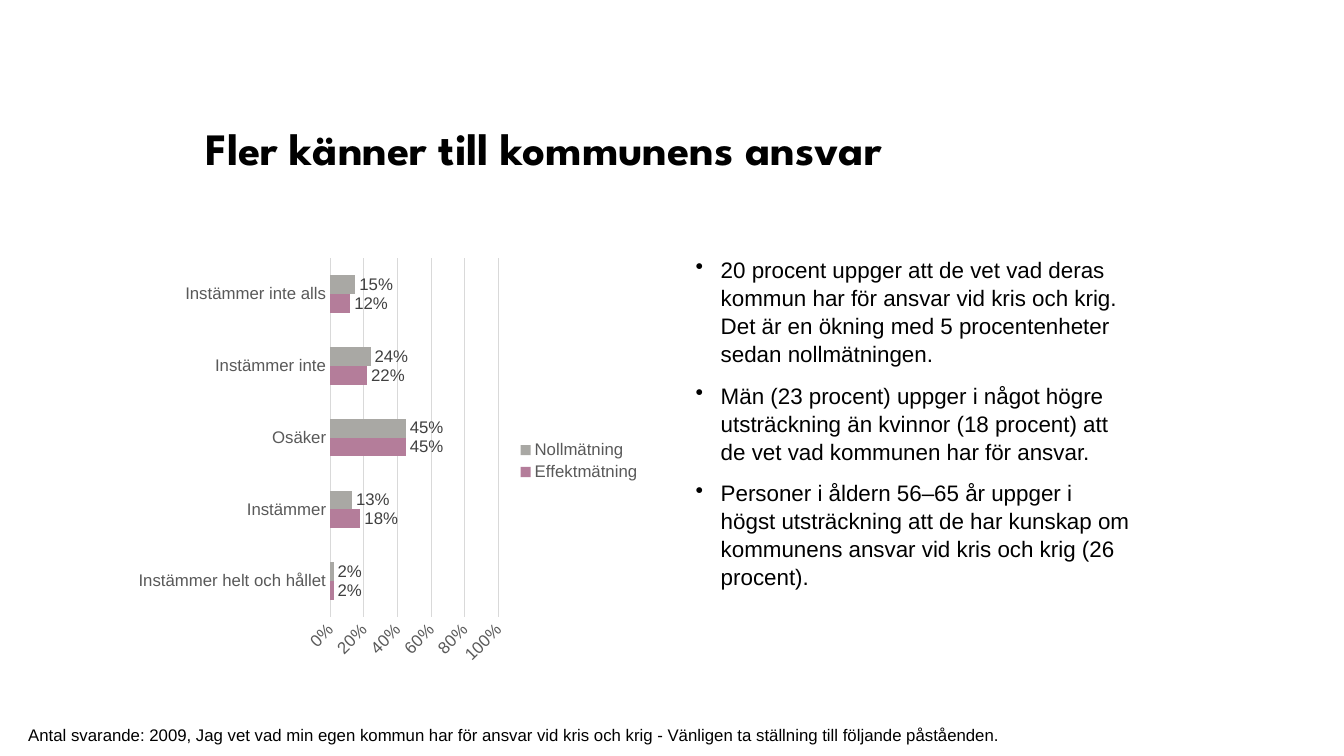
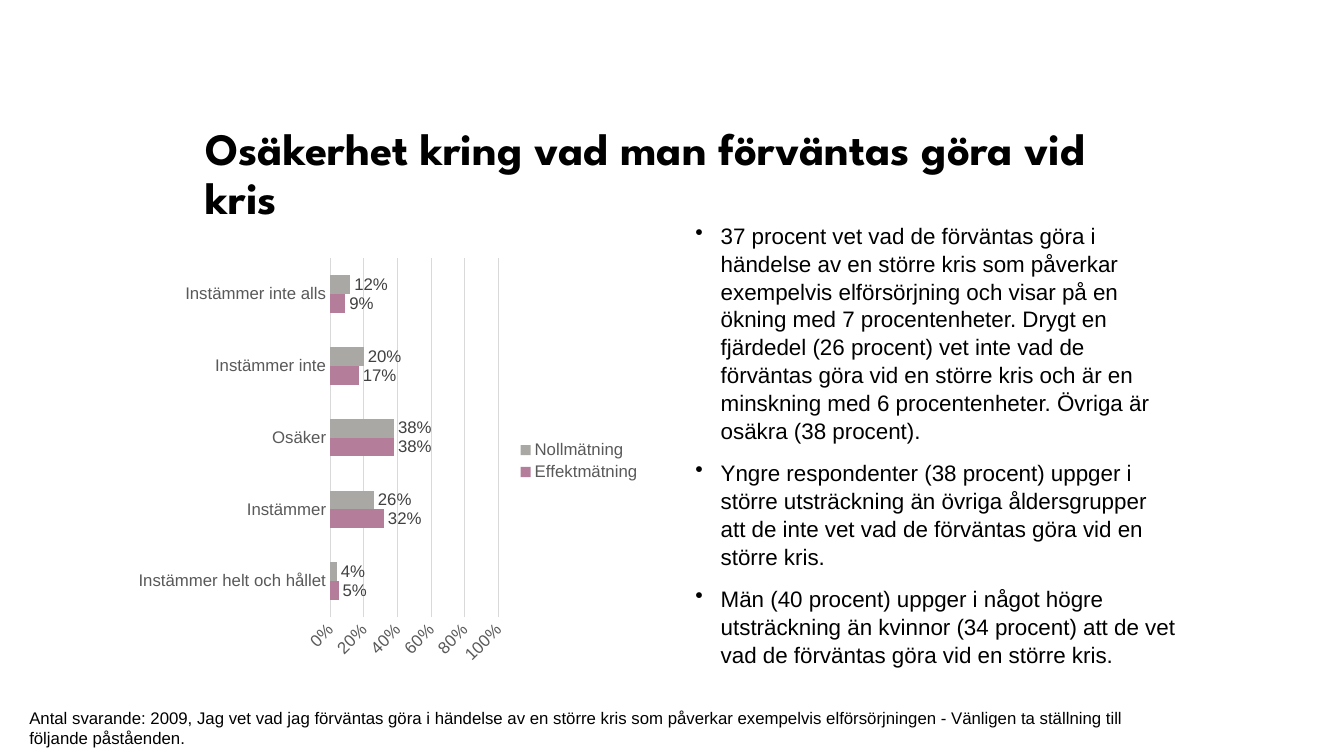
import pptx
import pptx.chart.data
import pptx.dml.color
import pptx.enum.chart
import pptx.enum.text
import pptx.oxml
import pptx.oxml.ns
import pptx.util

Inches = pptx.util.Inches
Pt = pptx.util.Pt

CATEGORIES = ["Instämmer helt och hållet", "Instämmer", "Osäker",
              "Instämmer inte", "Instämmer inte alls"]


def color(value):
    return pptx.dml.color.RGBColor.from_string(value)


class Deck:
    BODY_FONT = "Arial"
    TITLE_FONT = "League Spartan"
    TEXT = "000000"
    AXIS_TEXT = "595959"
    LABEL_TEXT = "404040"
    GRID = "D9D9D9"
    SERIES_COLORS = {"Effektmätning": "B47D9A", "Nollmätning": "A9A8A4"}

    def __init__(self):
        self.presentation = pptx.Presentation()
        self.presentation.slide_width = Inches(13.33)
        self.presentation.slide_height = Inches(7.5)
        self.slide = None

    def add_slide(self):
        self.slide = self.presentation.slides.add_slide(self.presentation.slide_layouts[6])

    def style_font(self, font, size, value, name=BODY_FONT, bold=False):
        font.size = Pt(size)
        font.name = name
        font.bold = bold
        font.color.rgb = color(value)

    def text_frame(self, left, top, width, height):
        box = self.slide.shapes.add_textbox(Inches(left), Inches(top), Inches(width), Inches(height))
        box.text_frame.word_wrap = True
        return box.text_frame

    def add_run(self, paragraph, text, size, name=BODY_FONT, bold=False):
        run = paragraph.add_run()
        run.text = text
        self.style_font(run.font, size, self.TEXT, name, bold)

    def title(self, text):
        paragraph = self.text_frame(1.94, 1.21, 9.38, 1.06).paragraphs[0]
        paragraph.line_spacing = 0.9
        self.add_run(paragraph, text, 32, self.TITLE_FONT, True)

    def bullets(self, texts, top, width, height):
        frame = self.text_frame(6.8, top, width, height)
        for index, text in enumerate(texts):
            paragraph = frame.add_paragraph() if index else frame.paragraphs[0]
            properties = paragraph._p.get_or_add_pPr()
            properties.set("marL", str(Inches(0.25)))
            properties.set("indent", str(Inches(-0.25)))
            bullet = pptx.oxml.parse_xml(
                f'<a:buChar {pptx.oxml.ns.nsdecls("a")} char="•"/>')
            properties.append(bullet)
            paragraph.line_spacing = 1.04
            if index:
                paragraph.space_before = Pt(10)
            self.add_run(paragraph, text, 16)

    def footer(self, text, left, top, width, height):
        frame = self.text_frame(left, top, width, height)
        frame.margin_left = frame.margin_right = 0
        frame.margin_top = frame.margin_bottom = 0
        self.add_run(frame.paragraphs[0], text, 12)

    def bar_chart(self, values):
        data = pptx.chart.data.CategoryChartData(number_format="0%")
        data.categories = CATEGORIES
        for name in self.SERIES_COLORS:
            data.add_series(name, values[name])
        chart = self.slide.shapes.add_chart(
            pptx.enum.chart.XL_CHART_TYPE.BAR_CLUSTERED,
            Inches(1.27), Inches(2.48), Inches(5.19), Inches(4.19), data).chart
        self.style_font(chart.font, 10, self.TEXT)
        chart.has_title = False
        chart.has_legend = True
        chart.legend.position = pptx.enum.chart.XL_LEGEND_POSITION.RIGHT
        chart.legend.include_in_layout = False
        self.style_font(chart.legend.font, 12, self.AXIS_TEXT)
        self.style_axes(chart)
        plot = chart.plots[0]
        plot.gap_width = 182
        plot.vary_by_categories = False
        for series in plot.series:
            series.format.fill.solid()
            series.format.fill.fore_color.rgb = color(self.SERIES_COLORS[series.name])
            labels = series.data_labels
            labels.show_value = True
            labels.position = pptx.enum.chart.XL_LABEL_POSITION.OUTSIDE_END
            labels.number_format = "0%"
            labels.number_format_is_linked = False
            self.style_font(labels.font, 12, self.LABEL_TEXT)

    def style_axes(self, chart):
        category_axis, value_axis = chart.category_axis, chart.value_axis
        for axis in (category_axis, value_axis):
            axis.major_tick_mark = pptx.enum.chart.XL_TICK_MARK.NONE
            axis.minor_tick_mark = pptx.enum.chart.XL_TICK_MARK.NONE
            self.style_font(axis.tick_labels.font, 12, self.AXIS_TEXT)
        value_axis.minimum_scale = 0
        value_axis.maximum_scale = 1
        value_axis.has_major_gridlines = True
        value_axis.tick_labels.number_format = "0%"
        value_axis.tick_labels.number_format_is_linked = False
        value_axis.format.line.fill.background()
        for line in (category_axis.format.line, value_axis.major_gridlines.format.line):
            line.color.rgb = color(self.GRID)
            line.width = Pt(0.75)

    def save(self):
        self.presentation.save("out.pptx")


def main():
    deck = Deck()

    deck.add_slide()
    deck.title("Fler känner till kommunens ansvar")
    deck.bullets([
        "20 procent uppger att de vet vad deras kommun har för ansvar vid kris och krig. "
        "Det är en ökning med 5 procentenheter sedan nollmätningen.",
        "Män (23 procent) uppger i något högre utsträckning än kvinnor (18 procent) "
        "att de vet vad kommunen har för ansvar.",
        "Personer i åldern 56–65 år uppger i högst utsträckning att de har kunskap om "
        "kommunens ansvar vid kris och krig (26 procent).",
    ], 2.48, 4.52, 4.19)
    deck.bar_chart({"Effektmätning": [0.02, 0.18, 0.45, 0.22, 0.12],
                    "Nollmätning": [0.02, 0.13, 0.45, 0.24, 0.15]})
    deck.footer("Antal svarande: 2009, Jag vet vad min egen kommun har för ansvar vid kris och krig "
                "- Vänligen ta ställning till följande påståenden.", 0.28, 7.19, 10.84, 0.2)

    deck.add_slide()
    deck.title("Osäkerhet kring vad man förväntas göra vid kris")
    deck.bullets([
        "37 procent vet vad de förväntas göra i händelse av en större kris som påverkar "
        "exempelvis elförsörjning och visar på en ökning med 7 procentenheter. "
        "Drygt en fjärdedel (26 procent) vet inte vad de förväntas göra vid en större kris "
        "och är en minskning med 6 procentenheter. Övriga är osäkra (38 procent).",
        "Yngre respondenter (38 procent) uppger i större utsträckning än övriga åldersgrupper "
        "att de inte vet vad de förväntas göra vid en större kris.",
        "Män (40 procent) uppger i något högre utsträckning än kvinnor (34 procent) "
        "att de vet vad de förväntas göra vid en större kris.",
    ], 2.14, 4.96, 4.38)
    deck.bar_chart({"Effektmätning": [0.05, 0.32, 0.38, 0.17, 0.09],
                    "Nollmätning": [0.04, 0.26, 0.38, 0.2, 0.12]})
    deck.footer("Antal svarande: 2009, Jag vet vad jag förväntas göra i händelse av en större kris "
                "som påverkar exempelvis elförsörjningen - Vänligen ta ställning till följande "
                "påståenden.", 0.29, 7.02, 11.48, 0.4)

    deck.save()


if __name__ == "__main__":
    main()
